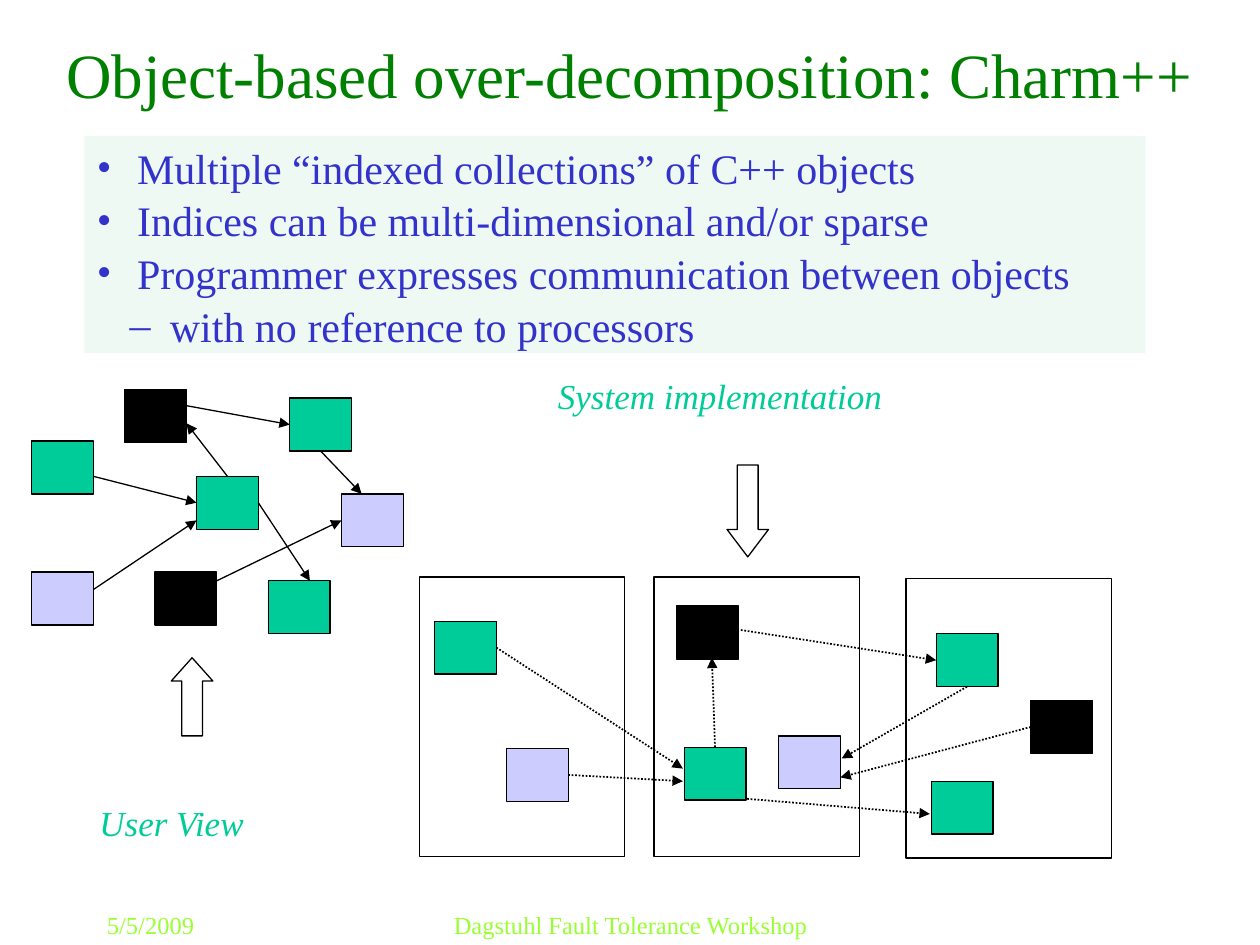
from lxml import etree
from pptx import Presentation
from pptx.dml.color import RGBColor
from pptx.enum.dml import MSO_LINE
from pptx.enum.shapes import MSO_CONNECTOR, MSO_SHAPE
from pptx.enum.text import MSO_ANCHOR, PP_ALIGN
from pptx.oxml.ns import qn
from pptx.util import Inches, Pt

RECTANGLE, UP, DOWN = MSO_SHAPE.RECTANGLE, MSO_SHAPE.UP_ARROW, MSO_SHAPE.DOWN_ARROW
STRAIGHT, DOTTED = MSO_CONNECTOR.STRAIGHT, MSO_LINE.ROUND_DOT
LEFT, CENTER = PP_ALIGN.LEFT, PP_ALIGN.CENTER
TOP, MIDDLE = MSO_ANCHOR.TOP, MSO_ANCHOR.MIDDLE
TOP_SIDE, LEFT_SIDE, BOTTOM_SIDE, RIGHT_SIDE = range(4)

FONT = "Times New Roman"
GREEN, BLACK, LAVENDER = "00CC99", "000000", "CCCCFF"
TITLE_GREEN, FOOTER_LIME, BODY_BLUE, PALE_MINT = "008000", "99FF33", "3333CC", "EEF9F4"
OBJECT_SIZE = (0.49, 0.42)

USER_OBJECTS = {
    "west": (0.25, 3.5, GREEN),
    "northeast": (2.3, 3.16, GREEN),
    "south": (1.23, 4.54, BLACK),
    "east": (2.71, 3.92, LAVENDER),
    "southwest": (0.25, 4.54, LAVENDER),
    "center": (1.56, 3.78, GREEN),
    "north": (0.99, 3.09, BLACK),
    "southeast": (2.13, 4.61, GREEN),
}
# An end is either a point or an (object name, side) pair.
USER_MESSAGES = [
    ((0.74, 3.78), ("center", LEFT_SIDE)),
    ((0.74, 4.68), (1.56, 4.13)),
    ((1.72, 4.61), ("east", LEFT_SIDE)),
    (("center", TOP_SIDE), (1.48, 3.36)),
    ((1.48, 3.22), ("northeast", LEFT_SIDE)),
    (("center", RIGHT_SIDE), (2.46, 4.61)),
    (("northeast", BOTTOM_SIDE), (2.87, 3.92)),
]
PROCESSORS = [(3.33, 4.58), (5.19, 4.58), (7.19, 4.59)]
SYSTEM_OBJECTS = {
    "east": (6.18, 5.84, LAVENDER),
    "southeast": (7.39, 6.2, GREEN),
    "center": (5.43, 5.93, GREEN),
    "southwest": (4.02, 5.94, LAVENDER),
    "north": (5.37, 4.81, BLACK),
    "west": (3.45, 4.93, GREEN),
    "south": (8.18, 5.56, BLACK),
    "northeast": (7.43, 5.03, GREEN),
}
SYSTEM_MESSAGES = [
    (("west", RIGHT_SIDE), (5.42, 6.1)),
    (("southwest", RIGHT_SIDE), (5.42, 6.2)),
    ((5.88, 5), ("northeast", LEFT_SIDE)),
    (("northeast", BOTTOM_SIDE), (6.68, 6.02)),
    (("south", LEFT_SIDE), (6.67, 6.17)),
    (("center", TOP_SIDE), (5.65, 5.22)),
    ((5.93, 6.34), (7.38, 6.46)),
]
# Text, bullet, left margin, hanging indent
BULLETS = [
    ("Multiple “indexed collections” of C++ objects", "•", 0.32, 0.32),
    ("Indices can be multi-dimensional and/or sparse", "•", 0.32, 0.32),
    ("Programmer expresses communication between objects", "•", 0.32, 0.32),
    ("with no reference to processors", "–", 0.58, 0.32),
]


def color(value):
    return RGBColor.from_string(value)


def inches(values):
    return [Inches(value) for value in values]


def add_span(para, text, size, ink, italic=False):
    span = para.add_run()
    span.text = text
    font = span.font
    font.name, font.size, font.italic = FONT, Pt(size), italic
    font.color.rgb = color(ink)


def add_text(shapes, bounds, text, size, ink, align=LEFT, anchor=TOP, italic=False):
    frame = shapes.add_textbox(*inches(bounds)).text_frame
    frame.word_wrap = True
    frame.vertical_anchor = anchor
    para = frame.paragraphs[0]
    para.alignment = align
    add_span(para, text, size, ink, italic)


def add_box(shapes, bounds, fill=None, line=BLACK, kind=RECTANGLE):
    box = shapes.add_shape(kind, *inches(bounds))
    box.shadow.inherit = False
    if fill:
        box.fill.solid()
        box.fill.fore_color.rgb = color(fill)
    else:
        box.fill.background()
    if line:
        box.line.color.rgb = color(line)
        box.line.width = Pt(0.75)
    else:
        box.line.fill.background()
    return box


def add_block_arrow(shapes, bounds, kind, head):
    arrow = add_box(shapes, bounds, kind=kind)
    arrow.adjustments[1] = head


def add_objects(shapes, objects):
    return {name: add_box(shapes, (left, top, *OBJECT_SIZE), fill)
            for name, (left, top, fill) in objects.items()}


def add_message(shapes, boxes, start, end, width, dash=None):
    """Draw an arrow whose ends are points or (object name, side) pairs."""
    start_joined, end_joined = start[0] in boxes, end[0] in boxes
    begin_point = (0, 0) if start_joined else start
    end_point = (0, 0) if end_joined else end
    message = shapes.add_connector(STRAIGHT, *inches((*begin_point, *end_point)))
    if start_joined:
        message.begin_connect(boxes[start[0]], start[1])
    if end_joined:
        message.end_connect(boxes[end[0]], end[1])
    message.line.color.rgb = color(BLACK)
    message.line.width = Pt(width)
    if dash:
        message.line.dash_style = dash
    etree.SubElement(message.line._get_or_add_ln(), qn("a:tailEnd"), type="triangle")
    etree.SubElement(message._element.spPr, qn("a:effectLst"))


def add_bullets(shapes):
    box = add_box(shapes, (0.67, 1.08, 8.42, 1.72), PALE_MINT, line=None)
    frame = box.text_frame
    frame.word_wrap = True
    frame.vertical_anchor = TOP
    for index, (text, bullet, margin, hanging) in enumerate(BULLETS):
        para = frame.paragraphs[0] if index == 0 else frame.add_paragraph()
        para.alignment = LEFT
        para.space_before = Pt(1.3)
        properties = para._p.get_or_add_pPr()
        properties.set("marL", str(Inches(margin)))
        properties.set("indent", str(-Inches(hanging)))
        etree.SubElement(properties, qn("a:buFont"), typeface=FONT)
        etree.SubElement(properties, qn("a:buChar"), char=bullet)
        add_span(para, text, 24, BODY_BLUE)


def add_user_view(shapes):
    boxes = add_objects(shapes, USER_OBJECTS)
    for start, end in USER_MESSAGES:
        add_message(shapes, boxes, start, end, 0.75)
    add_text(shapes, (0.69, 6.31, 2.65, 0.72), "User View", 20, GREEN, italic=True)
    add_block_arrow(shapes, (1.36, 5.22, 0.33, 0.62), UP, 0.56)


def add_system_view(shapes):
    add_text(shapes, (4.33, 2.92, 5.36, 0.71), "System implementation", 20, GREEN, italic=True)
    add_block_arrow(shapes, (5.77, 3.69, 0.33, 0.73), DOWN, 0.66)
    for left, top in PROCESSORS:
        add_box(shapes, (left, top, 1.63, 2.22))
    boxes = add_objects(shapes, SYSTEM_OBJECTS)
    for start, end in SYSTEM_MESSAGES:
        add_message(shapes, boxes, start, end, 1, DOTTED)


def main():
    deck = Presentation()
    deck.slide_width, deck.slide_height = Inches(10), Inches(7.5)
    shapes = deck.slides.add_slide(deck.slide_layouts[6]).shapes
    add_text(shapes, (0.33, 0.25, 9.33, 0.67), "Object-based over-decomposition: Charm++",
             36, TITLE_GREEN, CENTER, MIDDLE)
    add_text(shapes, (0.75, 7.17, 2.08, 0.33), "5/5/2009", 14, FOOTER_LIME)
    add_text(shapes, (3.42, 7.17, 3.17, 0.33), "Dagstuhl Fault Tolerance Workshop",
             14, FOOTER_LIME, CENTER)
    add_user_view(shapes.add_group_shape().shapes)
    add_system_view(shapes.add_group_shape().shapes)
    add_bullets(shapes)
    deck.save("out.pptx")


if __name__ == "__main__":
    main()
